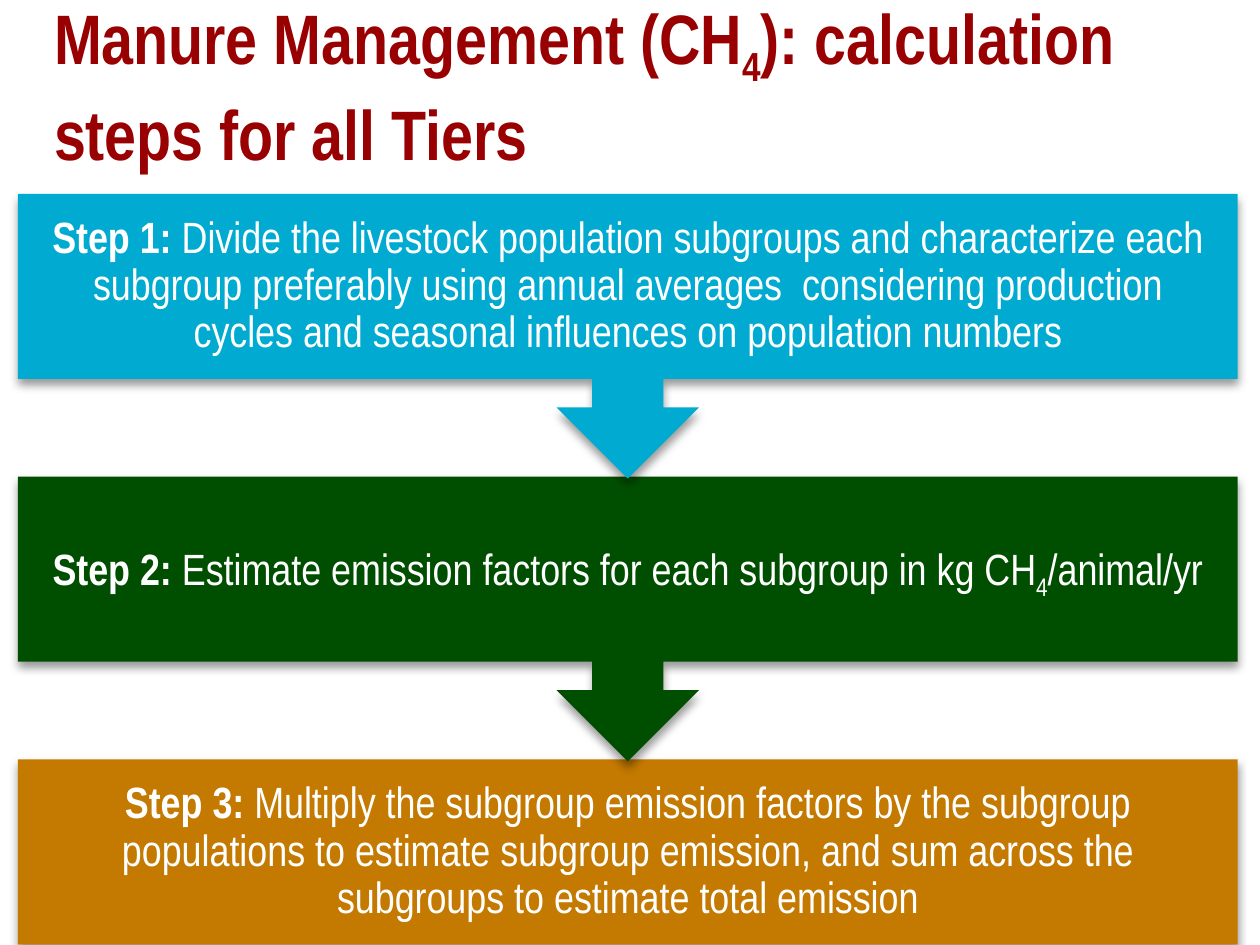
import lxml.etree
import pptx
import pptx.dml.color
import pptx.enum.shapes
import pptx.enum.text
import pptx.oxml.ns
import pptx.util

Cm, Pt = pptx.util.Cm, pptx.util.Pt
SHAPE = pptx.enum.shapes.MSO_SHAPE
ALIGN = pptx.enum.text.PP_ALIGN
FONT = "Arial Narrow"

# Step boxes: left, first top, distance between tops
LEFT, TOP, PITCH = 0.36, 3.91, 5.7
WIDTH, BOX, CALLOUT = 24.59, 3.73, 5.74

# Fill, label, then the text as (words, is subscript)
STEPS = [
    ("00AAD0", "Step 1: ", [
        ("Divide the livestock population subgroups and characterize each "
         "subgroup preferably using annual averages  considering production "
         "cycles and seasonal influences on population numbers", False)]),
    ("004F00", "Step 2: ", [
        ("Estimate emission factors for each subgroup in kg CH", False),
        ("4", True),
        ("/animal/yr", False)]),
    ("C47900", "Step 3: ", [
        ("Multiply the subgroup emission factors by the subgroup populations "
         "to estimate subgroup emission, and sum across the subgroups to "
         "estimate total emission", False)]),
]
TITLE = [("Manure Management (CH", False), ("4", True),
         ("): calculation steps for all Tiers", False)]


def color(code):
    return pptx.dml.color.RGBColor.from_string(code)


def style(para, size, code):
    para.font.name = FONT
    para.font.size = Pt(size)
    para.font.color.rgb = color(code)


def add_runs(para, parts):
    for words, is_sub in parts:
        run = para.add_run()
        run.text = words
        if is_sub:
            run._r.get_or_add_rPr().set("baseline", "-25000")


def add_shadow(shape):
    shape.shadow.inherit = False
    qn = pptx.oxml.ns.qn
    effects = shape._element.spPr.find(qn("a:effectLst"))
    outer = lxml.etree.SubElement(
        effects, qn("a:outerShdw"), blurRad=str(Pt(5.2)), dist=str(Pt(3)),
        dir="5400000", rotWithShape="0")
    black = lxml.etree.SubElement(outer, qn("a:srgbClr"), val="000000")
    lxml.etree.SubElement(black, qn("a:alpha"), val="40000")


def add_title(slide):
    box = slide.shapes.add_textbox(Cm(0.84), Cm(0.3), Cm(24.03), Cm(2.8))
    frame = box.text_frame
    frame.word_wrap = True
    frame.vertical_anchor = pptx.enum.text.MSO_ANCHOR.MIDDLE
    para = frame.paragraphs[0]
    style(para, 40, "990002")
    para.font.bold = True
    add_runs(para, TITLE)


def add_step(slide, index):
    fill, label, parts = STEPS[index]
    is_last = index == len(STEPS) - 1
    kind = SHAPE.RECTANGLE if is_last else SHAPE.DOWN_ARROW_CALLOUT
    shape = slide.shapes.add_shape(
        kind, Cm(LEFT), Cm(TOP + index * PITCH), Cm(WIDTH),
        Cm(BOX if is_last else CALLOUT))
    shape.fill.solid()
    shape.fill.fore_color.rgb = color(fill)
    shape.line.fill.background()
    add_shadow(shape)

    frame = shape.text_frame
    frame.word_wrap = True
    frame.vertical_anchor = pptx.enum.text.MSO_ANCHOR.MIDDLE
    frame.margin_left = frame.margin_right = Cm(0.48)
    frame.margin_top = frame.margin_bottom = Cm(0.48)
    para = frame.paragraphs[0]
    para.alignment = ALIGN.CENTER
    para.line_spacing = 0.9
    style(para, 25, "FFFFFF")
    add_runs(para, [(label, False)])
    para.runs[0].font.bold = True
    add_runs(para, parts)


def main():
    deck = pptx.Presentation()
    deck.slide_width, deck.slide_height = Cm(25.4), Cm(19.05)
    slide = deck.slides.add_slide(deck.slide_layouts[6])
    add_title(slide)
    # From the last step up, so each arrow tip lies over the next box
    for index in reversed(range(len(STEPS))):
        add_step(slide, index)
    deck.save("out.pptx")


if __name__ == "__main__":
    main()
